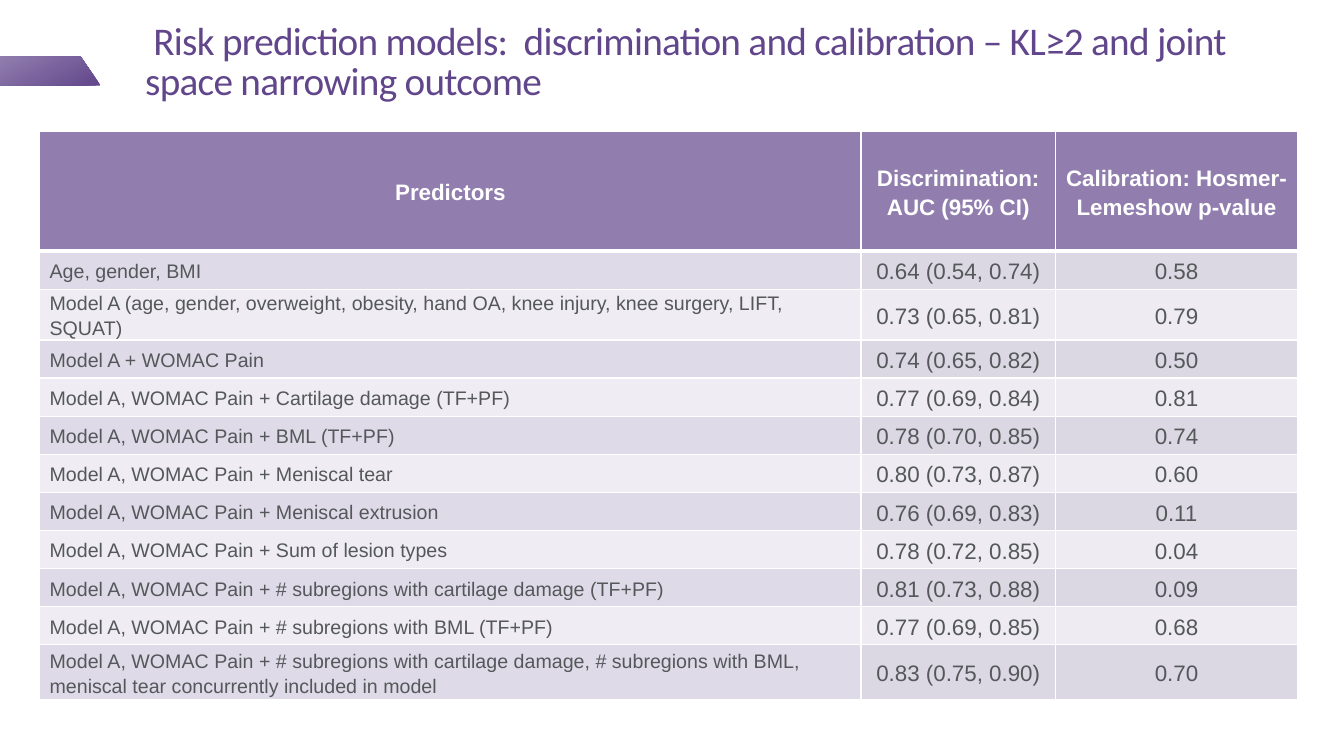
from dataclasses import dataclass

from lxml.etree import SubElement
from pptx import Presentation
from pptx.dml.color import RGBColor
from pptx.enum.text import MSO_ANCHOR, MSO_AUTO_SIZE, PP_ALIGN
from pptx.oxml.ns import qn
from pptx.util import Cm, Pt

# Content
TITLE = (" Risk prediction models:  discrimination and calibration – "
         "KL≥2 and joint space narrowing outcome")
HEADINGS = ("Predictors", "Discrimination:\nAUC (95% CI)",
            "Calibration: Hosmer-Lemeshow p-value")
MODELS = [
    ("Age, gender, BMI", "0.64 (0.54, 0.74)", "0.58"),
    ("Model A (age, gender, overweight, obesity, hand OA, knee injury, "
     "knee surgery, LIFT, SQUAT)", "0.73 (0.65, 0.81)", "0.79"),
    ("Model A + WOMAC Pain", "0.74 (0.65, 0.82)", "0.50"),
    ("Model A, WOMAC Pain + Cartilage damage (TF+PF)", "0.77 (0.69, 0.84)", "0.81"),
    ("Model A, WOMAC Pain + BML (TF+PF)", "0.78 (0.70, 0.85)", "0.74"),
    ("Model A, WOMAC Pain + Meniscal tear", "0.80 (0.73, 0.87)", "0.60"),
    ("Model A, WOMAC Pain + Meniscal extrusion", "0.76 (0.69, 0.83)", "0.11"),
    ("Model A, WOMAC Pain + Sum of lesion types", "0.78 (0.72, 0.85)", "0.04"),
    ("Model A, WOMAC Pain + # subregions with cartilage damage (TF+PF)",
     "0.81 (0.73, 0.88)", "0.09"),
    ("Model A, WOMAC Pain + # subregions with BML (TF+PF)", "0.77 (0.69, 0.85)", "0.68"),
    ("Model A, WOMAC Pain + # subregions with cartilage damage, # subregions "
     "with BML, meniscal tear concurrently included in model",
     "0.83 (0.75, 0.90)", "0.70"),
]


@dataclass(frozen=True)
class Theme:
    purple: str = "61468B"
    lilac: str = "917EAE"
    white: str = "FFFFFF"
    grey: str = "54585A"
    predictor_bands: tuple = ("DFDAE8", "EFECF3")
    value_bands: tuple = ("DCD8E3", "EEECF2")
    title_font: str = "Calibri"
    table_font: str = "Arial"
    title_size: int = 28
    value_size: int = 16
    predictor_size: int = 14
    thin: int = 1
    thick: int = 3


THEME = Theme()

# Layout
TABLE_LEFT, TABLE_TOP = Cm(1), Cm(3.31)
COLUMN_WIDTHS = (Cm(20.7), Cm(4.9), Cm(6.1))
ROW_HEIGHTS = [Cm(3.02)] + [Cm(0.96)] * (len(MODELS) - 1) + [Cm(1.39)]


def rgb(value):
    return RGBColor.from_string(value)


def set_borders(cell, top, bottom):
    """Draw white borders; they must come before the fill in the cell XML."""
    properties = cell._tc.get_or_add_tcPr()
    widths = (("lnL", THEME.thin), ("lnR", THEME.thin), ("lnT", top), ("lnB", bottom))
    for position, (side, width) in enumerate(widths):
        border = SubElement(properties, qn("a:" + side), w=str(Pt(width)))
        fill = SubElement(border, qn("a:solidFill"))
        SubElement(fill, qn("a:srgbClr"), val=THEME.white)
        properties.insert(position, border)


def fill_cell(cell, words, row, column):
    header, predictor = row == 0, column == 0
    bands = THEME.predictor_bands if predictor else THEME.value_bands
    cell.fill.solid()
    cell.fill.fore_color.rgb = rgb(THEME.lilac if header else bands[(row - 1) % 2])
    set_borders(cell, THEME.thick if row == 1 else THEME.thin,
                THEME.thick if header else THEME.thin)
    cell.vertical_anchor = MSO_ANCHOR.MIDDLE
    cell.margin_left = cell.margin_right = Cm(0.25)
    cell.margin_top = cell.margin_bottom = 0
    cell.text = words
    for paragraph in cell.text_frame.paragraphs:
        left = predictor and not header
        paragraph.alignment = PP_ALIGN.LEFT if left else PP_ALIGN.CENTER
        paragraph.line_spacing = 1.15
        font = paragraph.font
        font.name = THEME.table_font
        font.size = Pt(THEME.predictor_size if left else THEME.value_size)
        font.bold = header
        font.color.rgb = rgb(THEME.white if header else THEME.grey)


def add_accent(slide):
    top, bottom = Cm(1.42), Cm(2.16)
    builder = slide.shapes.build_freeform(0, top)
    builder.add_line_segments([(Cm(2.03), top), (Cm(2.54), bottom), (0, bottom)])
    accent = builder.convert_to_shape()
    accent.shadow.inherit = False
    accent.line.fill.background()
    accent.fill.gradient()
    accent.fill.gradient_angle = 118
    for stop, colour in zip(accent.fill.gradient_stops, (THEME.purple, THEME.lilac)):
        stop.color.rgb = rgb(colour)


def add_title(slide):
    title = slide.shapes.title
    title.left, title.top, title.width, title.height = Cm(3.66), Cm(0.64), Cm(28.58), Cm(2.11)
    frame = title.text_frame
    frame.text = TITLE
    frame.word_wrap = True
    frame.auto_size = MSO_AUTO_SIZE.NONE
    frame.vertical_anchor = MSO_ANCHOR.BOTTOM
    frame.margin_left = frame.margin_top = 0
    frame.margin_right, frame.margin_bottom = Cm(0.25), Cm(0.13)
    heading = frame.paragraphs[0]
    heading.alignment = PP_ALIGN.LEFT
    heading.line_spacing = 0.85
    heading.font.name = THEME.title_font
    heading.font.size = Pt(THEME.title_size)
    heading.font.color.rgb = rgb(THEME.purple)
    # Letter spacing in hundredths of a point
    heading.runs[0]._r.get_or_add_rPr().set("spc", "-50")


def add_models(slide):
    rows = [HEADINGS, *MODELS]
    models = slide.shapes.add_table(len(rows), len(HEADINGS), TABLE_LEFT, TABLE_TOP,
                                    sum(COLUMN_WIDTHS), sum(ROW_HEIGHTS)).table
    for column, width in zip(models.columns, COLUMN_WIDTHS):
        column.width = width
    for row, height in zip(models.rows, ROW_HEIGHTS):
        row.height = height
    for row, entries in enumerate(rows):
        for column, words in enumerate(entries):
            fill_cell(models.cell(row, column), words, row, column)


def main():
    deck = Presentation()
    deck.slide_width, deck.slide_height = Cm(33.87), Cm(19.05)
    slide = deck.slides.add_slide(deck.slide_layouts[5])
    add_accent(slide)
    add_models(slide)
    add_title(slide)
    deck.save("out.pptx")


if __name__ == "__main__":
    main()
